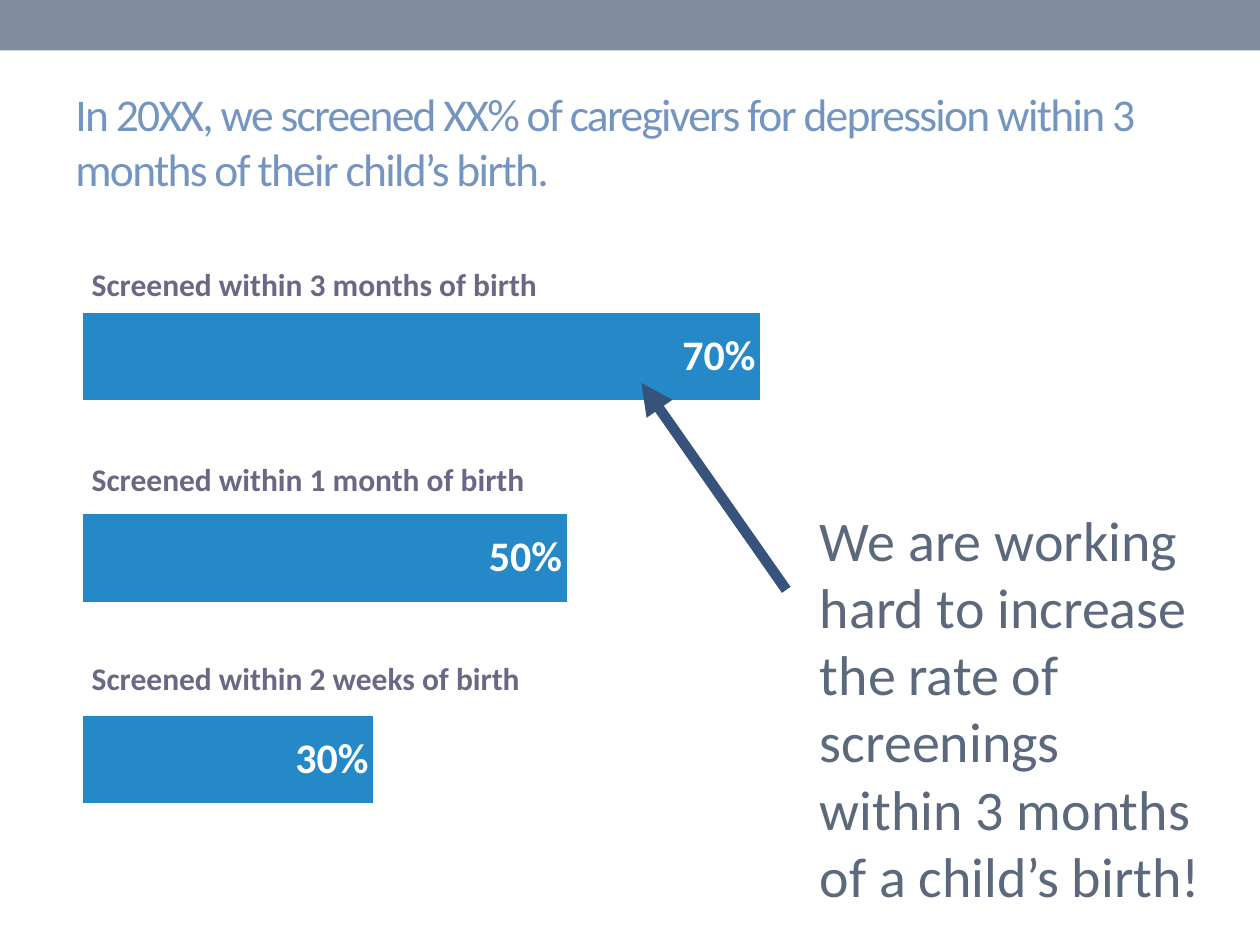
from lxml import etree
from pptx import Presentation
from pptx.chart.data import CategoryChartData
from pptx.dml.color import RGBColor
from pptx.enum.chart import XL_CHART_TYPE, XL_LABEL_POSITION
from pptx.enum.shapes import MSO_CONNECTOR, MSO_SHAPE
from pptx.enum.text import MSO_ANCHOR
from pptx.oxml.ns import qn
from pptx.util import Cm, Pt

BAR = XL_CHART_TYPE.BAR_CLUSTERED
INSIDE_END = XL_LABEL_POSITION.INSIDE_END
RECT = MSO_SHAPE.RECTANGLE
STRAIGHT = MSO_CONNECTOR.STRAIGHT
TOP, MIDDLE = MSO_ANCHOR.TOP, MSO_ANCHOR.MIDDLE
FONT = "Calibri"
COLORS = {
    "band": "808DA0",
    "title": "7595C1",
    "bar": "2589C7",
    "value": "FFFFFF",
    "label": "696986",
    "arrow": "37537B",
    "body": "5C697C",
    "chart": "292934",
}


def rgb(name):
    return RGBColor.from_string(COLORS[name])


def add_text(s, text, box, size, color, bold=False, anchor=TOP):
    tf = s.shapes.add_textbox(*[Cm(v) for v in box]).text_frame
    tf.word_wrap = True
    tf.vertical_anchor = anchor
    p = tf.paragraphs[0]
    p.text = text
    p.font.name = FONT
    p.font.size = Pt(size)
    p.font.bold = bold
    p.font.color.rgb = rgb(color)
    return p


prs = Presentation()
prs.slide_width, prs.slide_height = Cm(25.4), Cm(19.05)
s = prs.slides.add_slide(prs.slide_layouts[6])

band = s.shapes.add_shape(RECT, 0, 0, prs.slide_width, Cm(1.02))
band.shadow.inherit = False
band.fill.solid()
band.fill.fore_color.rgb = rgb("band")
band.line.fill.background()

data = CategoryChartData(number_format="0%")
data.categories = ["1", "2", "3"]
data.add_series("Series 1", [0.3, 0.5, 0.7])
chart = s.shapes.add_chart(BAR, Cm(1.27), Cm(4.9), Cm(20.32), Cm(12.7), data).chart
chart.has_legend = False
chart.has_title = False
chart.font.name = "Arial"
chart.font.size = Pt(10)
chart.font.color.rgb = rgb("chart")
chart.category_axis.visible = False
axis = chart.value_axis
axis.visible = False
axis.has_major_gridlines = False
axis.minimum_scale, axis.maximum_scale = 0, 1
plot = chart.plots[0]
plot.gap_width = 130
plot.vary_by_categories = False
fill = plot.series[0].format.fill
fill.solid()
fill.fore_color.rgb = rgb("bar")
plot.has_data_labels = True
labels = plot.data_labels
labels.show_value = True
labels.position = INSIDE_END
labels.number_format = "0%"
labels.number_format_is_linked = False
labels.font.name = FONT
labels.font.size = Pt(24)
labels.font.bold = True
labels.font.color.rgb = rgb("value")

for period, box in [
    ("3 months", (1.6, 5.21, 13.72, 1.3)),
    ("1 month", (1.6, 9.14, 12.52, 1.17)),
    ("2 weeks", (1.6, 13.16, 11.58, 1.47)),
]:
    add_text(s, f"Screened within {period} of birth", box, 18, "label", bold=True)

title = add_text(
    s,
    "In 20XX, we screened XX% of caregivers for depression within 3 months of their child’s birth.",
    (1.27, 1.47, 22.86, 2.74), 26, "title", anchor=MIDDLE,
)
title.runs[0].font._element.set("spc", "-100") if hasattr(title.runs[0].font, "_element") else title.runs[0]._r.get_or_add_rPr().set("spc", "-100")

arrow = s.shapes.add_connector(STRAIGHT, Cm(15.85), Cm(11.89), Cm(12.93), Cm(7.72))
arrow.line.color.rgb = rgb("arrow")
arrow.line.width = Pt(6)
ln = arrow.line._get_or_add_ln()
etree.SubElement(ln, qn("a:tailEnd"), type="triangle")
etree.SubElement(arrow._element.spPr, qn("a:effectLst"))

add_text(
    s,
    "We are working hard to increase the rate of screenings within 3 months of a child’s birth!",
    (16.28, 10.06, 8.26, 8.31), 32, "body",
)

prs.save("out.pptx")
